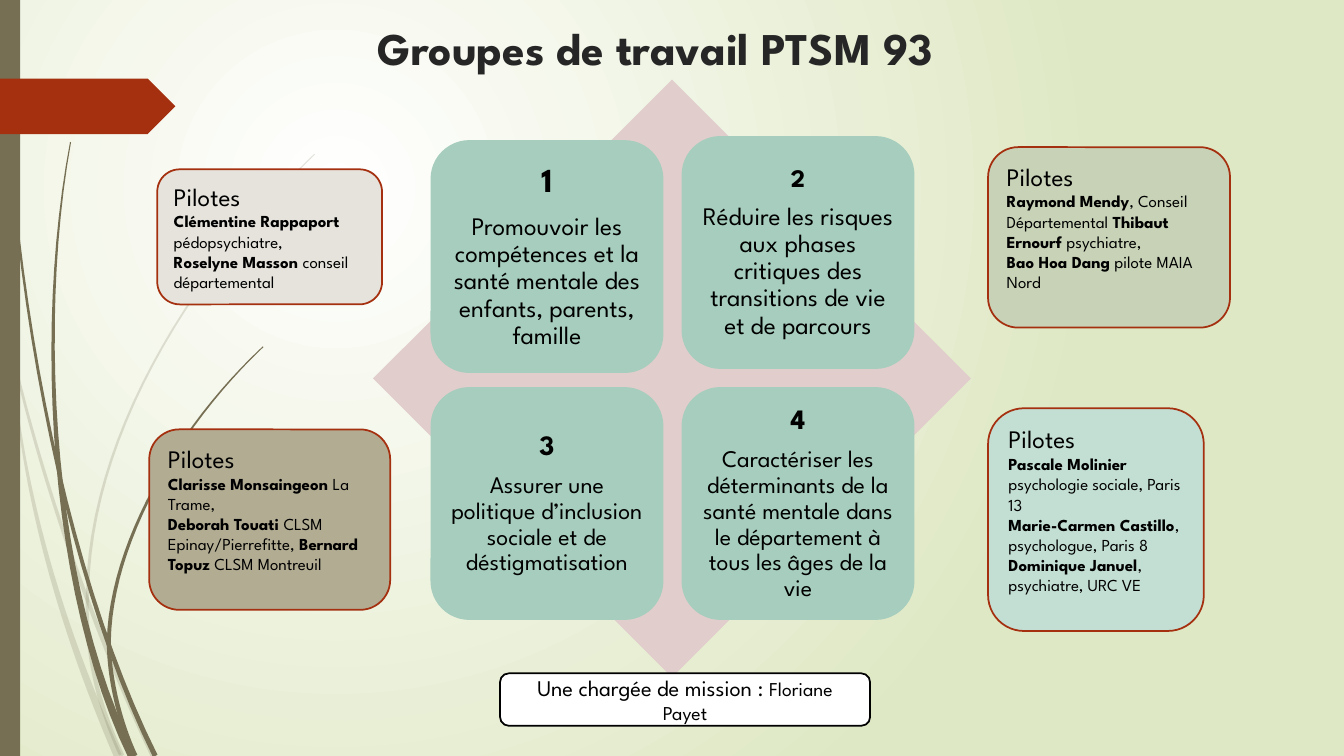
import math

import lxml.etree
import pptx
import pptx.dml.color
import pptx.enum.shapes
import pptx.enum.text
import pptx.oxml.ns
import pptx.util
from pptx.util import Inches

MSO = pptx.enum.shapes.MSO_SHAPE
ALIGN = pptx.enum.text.PP_ALIGN
ANCHOR = pptx.enum.text.MSO_ANCHOR
RGB = pptx.dml.color.RGBColor.from_string
qn = pptx.oxml.ns.qn
FONT = "League Spartan"
COLORS = {
    "white": "FFFFFF", "black": "000000", "title": "262626", "meadow": "DFE8C4",
    "stem": "766F54", "rust": "A53010", "rose": "E1CDCC", "mint": "A6CDBD",
    "aqua": "C3DED3", "khaki": "B2AC93", "pearl": "E5E3DB", "sage": "C7D2B7",
}

prs = pptx.Presentation()
prs.slide_width, prs.slide_height = Inches(13.33), Inches(7.5)
s = prs.slides.add_slide(prs.slide_layouts[6])


def add_run(p, text, size=12, bold=False, color="black"):
    r = p.add_run()
    r.text = text
    r.font.name, r.font.size, r.font.bold = FONT, pptx.util.Pt(size), bold
    r.font.color.rgb = RGB(COLORS[color])


def add_box(kind, x, y, w, h, fill, line=None):
    sp = s.shapes.add_shape(kind, Inches(x), Inches(y), Inches(w), Inches(h))
    sp.shadow.inherit = False
    sp.fill.solid()
    sp.fill.fore_color.rgb = RGB(COLORS[fill])
    if line:
        sp.line.color.rgb = RGB(COLORS[line])
        sp.line.width = pptx.util.Pt(1.25)
    else:
        sp.line.fill.background()
    sp.text_frame.word_wrap = True
    return sp


# Background: radial glow in the upper left
bg = s.background.fill
bg.gradient()
for stop, color in zip(bg.gradient_stops, ("white", "meadow")):
    stop.color.rgb = RGB(COLORS[color])
grad = s.background._cSld.find(".//" + qn("a:gradFill"))
grad.remove(grad.find(qn("a:lin")))
glow = lxml.etree.SubElement(grad, qn("a:path"), {"path": "circle"})
lxml.etree.SubElement(glow, qn("a:fillToRect"),
                      {"l": "50000", "t": "50000", "r": "100000", "b": "100000"})

# Grass: each stem is a Bezier spine whose width grows from start to end
STEPS = 24
stems = [  # opacity in percent, start width, end width, four control points
    (20, 0.02, 0.05, [(0, 2.9), (0.25, 4.3), (0.85, 6.1), (1.52, 7.5)]),
    (20, 0.01, 0.08, [(0.11, 3.5), (0.22, 4.9), (0.6, 6.2), (1.17, 7.5)]),
    (20, 0.01, 0.03, [(3.12, 1.53), (1.8, 2.8), (0.9, 4.4), (0.87, 5.85)]),
    (20, 0.03, 0.05, [(0.87, 5.85), (0.83, 6.5), (1, 7.05), (1.21, 7.5)]),
    (100, 0.01, 0.05, [(0.04, 0), (0.05, 2.6), (0.6, 5.6), (1.54, 7.5)]),
    (100, 0.01, 0.08, [(0.7, 1.41), (0.35, 3.3), (0.52, 5.9), (1.31, 7.5)]),
    (100, 0.01, 0.04, [(2.61, 3.44), (1.75, 4.25), (1.1, 5.4), (1.08, 6.36)]),
    (100, 0.04, 0.05, [(1.08, 6.36), (1.08, 6.75), (1.2, 7.2), (1.34, 7.5)]),
]
for opacity, start_width, end_width, controls in stems:
    one_side, other_side = [], []
    for step in range(STEPS + 1):
        t = step / STEPS
        u = 1 - t
        weights = (u**3, 3 * u * u * t, 3 * u * t * t, t**3)
        slopes = (-u * u, u * u - 2 * u * t, 2 * u * t - t * t, t * t)
        x, y = (sum(k * c[axis] for k, c in zip(weights, controls)) for axis in (0, 1))
        dx, dy = (sum(k * c[axis] for k, c in zip(slopes, controls)) for axis in (0, 1))
        half = (start_width * u + end_width * t) / 2 / math.hypot(dx, dy)
        one_side.append((Inches(x - dy * half), Inches(y + dx * half)))
        other_side.append((Inches(x + dy * half), Inches(y - dx * half)))
    outline = one_side + other_side[::-1]
    builder = s.shapes.build_freeform(*outline[0])
    builder.add_line_segments(outline[1:], close=True)
    sp = builder.convert_to_shape()
    sp.shadow.inherit = False
    sp.fill.solid()
    sp.fill.fore_color.rgb = RGB(COLORS["stem"])
    sp.line.fill.background()
    if opacity < 100:
        tint = sp._element.spPr.find(qn("a:solidFill")).find(qn("a:srgbClr"))
        lxml.etree.SubElement(tint, qn("a:alpha"), {"val": str(opacity * 1000)})

# Left band and arrow
add_box(MSO.RECTANGLE, 0, 0, 0.2, 7.5, "stem")
add_box(MSO.PENTAGON, 0, 0.78, 1.74, 0.55, "rust")

# Title
tf = s.shapes.add_textbox(Inches(3.65), Inches(0.15), Inches(6.28), Inches(0.7)).text_frame
tf.word_wrap = True
add_run(tf.paragraphs[0], "Groupes de travail PTSM 93", size=32.4, bold=True, color="title")

# Diamond with the four working groups
add_box(MSO.DIAMOND, 3.7, 0.79, 5.93, 5.93, "rose")
LEFT, RIGHT, TILE = 4.27, 6.76, 2.31
groups = [  # x, y, number size, goal size, inset, goal
    (LEFT, 1.39, 24, 18, 0.1,
     "Promouvoir les compétences et la santé mentale des enfants, parents, famille"),
    (RIGHT, 1.35, 18, 18, 0.07,
     "Réduire les risques aux phases critiques des transitions de vie et de parcours"),
    (LEFT, 3.84, 20, 17, 0.08,
     "Assurer une politique d’inclusion sociale et de déstigmatisation"),
    (RIGHT, 3.84, 20, 17, 0.08,
     "Caractériser les déterminants de la santé mentale dans le département "
     "à tous les âges de la vie"),
]
for number, (x, y, number_size, goal_size, inset, goal) in enumerate(groups, 1):
    tf = add_box(MSO.ROUNDED_RECTANGLE, x, y, TILE, TILE, "mint").text_frame
    tf.vertical_anchor = ANCHOR.MIDDLE
    tf.margin_left = tf.margin_right = tf.margin_top = tf.margin_bottom = Inches(inset)
    for p, text, size, bold in ((tf.paragraphs[0], str(number), number_size, True),
                                (tf.add_paragraph(), goal, goal_size, False)):
        p.alignment = ALIGN.CENTER
        p.line_spacing = 0.9
        p.space_after = pptx.util.Pt(round(0.42 * size, 1))
        add_run(p, text, size=size, bold=bold)

# Pilots of each group: runs alternate bold name, plain role
pilots = [
    (9.8, 4.05, 2.14, 2.21, "aqua", [
        ["Pascale Molinier ", "psychologie sociale, Paris 13"],
        ["Marie-Carmen Castillo", ", psychologue, Paris 8"],
        ["Dominique Januel", ", psychiatre, URC VE"]]),
    (1.48, 4.26, 2.39, 1.79, "khaki", [
        ["Clarisse Monsaingeon ", "La Trame,"],
        ["Deborah Touati ", "CLSM Epinay/Pierrefitte, ", "Bernard Topuz ", "CLSM Montreuil"]]),
    (1.56, 1.68, 2.23, 1.34, "pearl", [
        ["Clémentine Rappaport ", "pédopsychiatre,"],
        ["Roselyne Masson ", "conseil départemental"]]),
    (9.8, 1.46, 2.4, 1.79, "sage", [
        ["Raymond Mendy", ", Conseil Départemental ", "Thibaut Ernourf ", "psychiatre,"],
        ["Bao Hoa Dang", " pilote MAIA Nord"]]),
]
for x, y, w, h, fill, people in pilots:
    tf = add_box(MSO.ROUNDED_RECTANGLE, x, y, w, h, fill, line="rust").text_frame
    tf.auto_size = pptx.enum.text.MSO_AUTO_SIZE.SHAPE_TO_FIT_TEXT
    tf.vertical_anchor = ANCHOR.TOP
    tf.paragraphs[0].alignment = ALIGN.LEFT
    add_run(tf.paragraphs[0], "Pilotes", size=18)
    for parts in people:
        p = tf.add_paragraph()
        p.alignment = ALIGN.LEFT
        for i, part in enumerate(parts):
            add_run(p, part, bold=i % 2 == 0)

# Project officer
tf = add_box(MSO.ROUNDED_RECTANGLE, 4.96, 6.68, 3.67, 0.52, "white", line="black").text_frame
tf.vertical_anchor = ANCHOR.MIDDLE
tf.margin_left = tf.margin_right = Inches(0.15)
p = tf.paragraphs[0]
p.alignment = ALIGN.CENTER
add_run(p, "Une chargée de mission : ", size=16)
add_run(p, "Floriane Payet", size=14)

prs.save("out.pptx")
